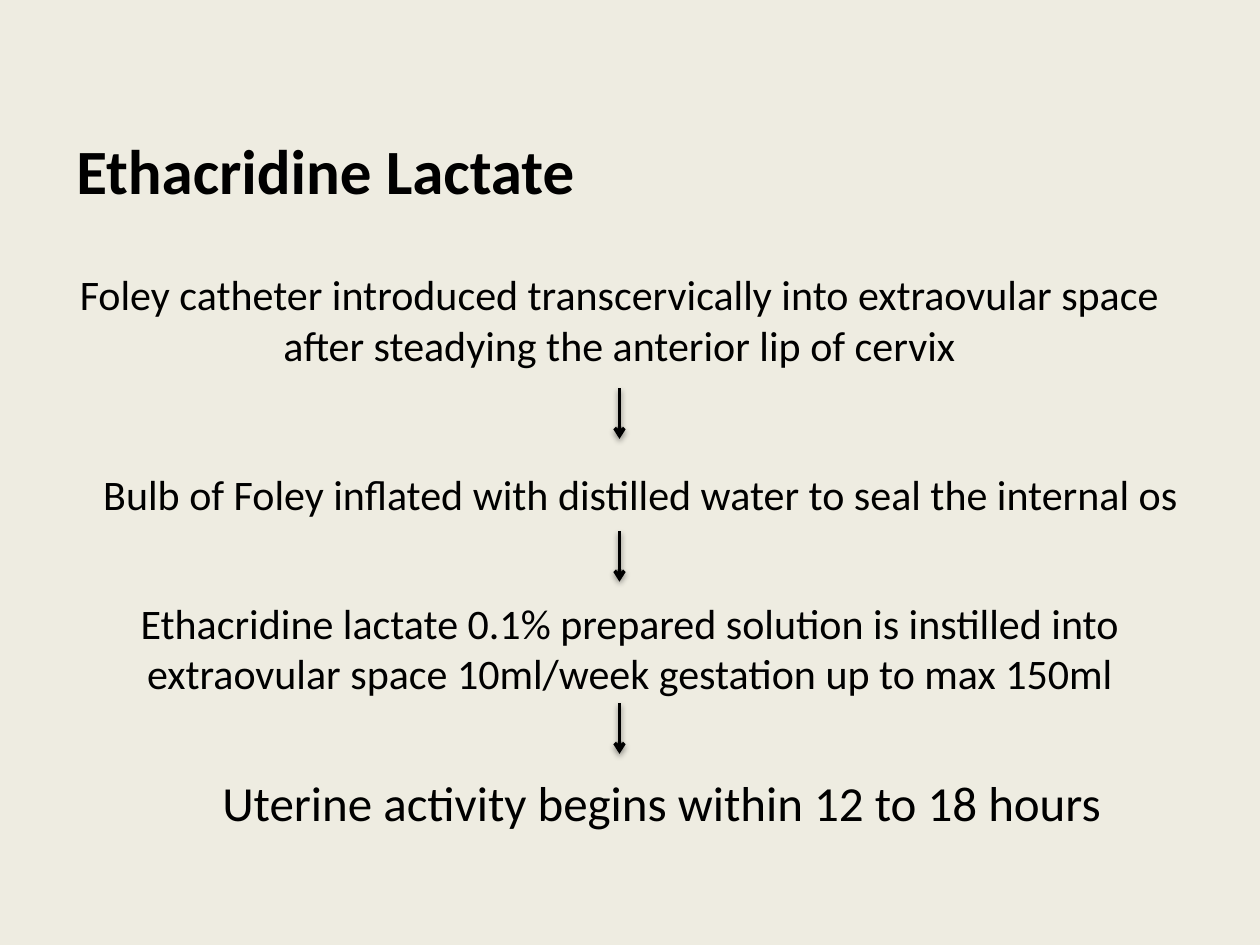
"""Build a slide with the steps of ethacridine lactate instillation."""
from lxml.etree import SubElement
from pptx import Presentation
from pptx.dml.color import RGBColor
from pptx.enum.shapes import MSO_CONNECTOR as Connector
from pptx.enum.text import MSO_AUTO_SIZE as AutoSize, PP_ALIGN as Align
from pptx.oxml import parse_xml
from pptx.oxml.ns import nsdecls, qn
from pptx.util import Inches, Pt

COLORS = {"background": "EEECE1", "ink": "000000"}
FONT = "Calibri"

presentation = Presentation()
presentation.slide_width = Inches(10)
presentation.slide_height = Inches(7.5)
COLUMN = presentation.slide_width / 120
ROW = presentation.slide_height / 90

slide = presentation.slides.add_slide(presentation.slide_layouts[6])
slide.background.fill.solid()
slide.background.fill.fore_color.rgb = RGBColor.from_string(COLORS["background"])


def add_text(text, column, row, columns, rows, size=24, bold=False, align=Align.CENTER):
    shape = slide.shapes.add_textbox(
        int(column * COLUMN), int(row * ROW), int(columns * COLUMN), int(rows * ROW))
    frame = shape.text_frame
    frame.word_wrap = True
    frame.auto_size = AutoSize.SHAPE_TO_FIT_TEXT
    paragraph = frame.paragraphs[0]
    paragraph.alignment = align
    run = paragraph.add_run()
    run.text = text
    run.font.name = FONT
    run.font.size = Pt(size)
    run.font.bold = bold
    run.font.color.rgb = RGBColor.from_string(COLORS["ink"])


add_text("Ethacridine Lactate", 6.1, 11.9, 59.5, 8.5, size=36, bold=True, align=Align.LEFT)

STEPS = [
    ("Foley catheter introduced transcervically into extraovular space "
     "after steadying the anterior lip of cervix", 6, 25, 106, 10.9, 24),
    ("Bulb of Foley inflated with distilled water to seal the internal os",
     7, 44, 108, 6, 24),
    ("Ethacridine lactate 0.1% prepared solution is instilled into "
     "extraovular space 10ml/week gestation up to max 150ml", 5, 56.3, 110, 10.9, 24),
    ("Uterine activity begins within 12 to 18 hours", 13, 73, 100, 6.9, 28),
]
for text, column, row, columns, rows, size in STEPS:
    add_text(text, column, row, columns, rows, size=size)

ARROW_COLUMN = int(59 * COLUMN)
ARROW_ROWS = 4.8
SHADOW = (
    f'<a:effectLst {nsdecls("a")}>'
    '<a:outerShdw blurRad="40000" dist="20000" dir="5400000" rotWithShape="0">'
    f'<a:srgbClr val="{COLORS["ink"]}"><a:alpha val="38000"/></a:srgbClr>'
    '</a:outerShdw></a:effectLst>'
)
for row in (37, 50.6, 67):
    arrow = slide.shapes.add_connector(
        Connector.STRAIGHT, ARROW_COLUMN, int(row * ROW),
        ARROW_COLUMN, int((row + ARROW_ROWS) * ROW))
    arrow.line.width = Pt(2)
    arrow.line.color.rgb = RGBColor.from_string(COLORS["ink"])
    SubElement(arrow.line._get_or_add_ln(), qn("a:tailEnd"), type="arrow")
    arrow._element.spPr.append(parse_xml(SHADOW))

presentation.save("out.pptx")
